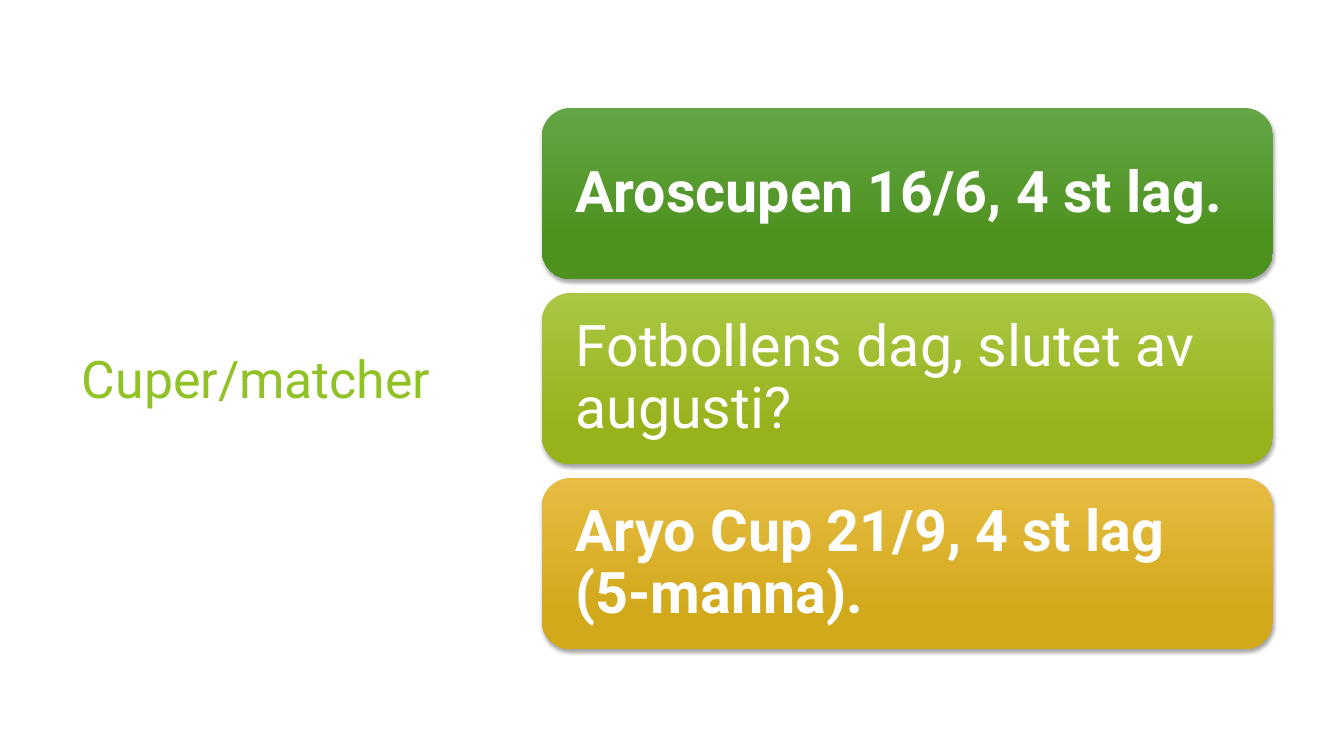
import pptx
import pptx.dml.color
import pptx.enum.shapes
import pptx.enum.text
import pptx.oxml
import pptx.oxml.ns
import pptx.util

TITLE = "Cuper/matcher"
# text, bold, colour name
EVENTS = [
    ("Aroscupen 16/6, 4 st lag.", True, "green"),
    ("Fotbollens dag, slutet av augusti?", False, "lime"),
    ("Aryo Cup 21/9, 4 st lag (5-manna).", True, "gold"),
]
COLORS = {
    "title": "90C226",
    "event_text": "FFFFFF",
    "green_top": "63A545", "green_bottom": "4D921E",
    "lime_top": "AAC744", "lime_bottom": "97B31C",
    "gold_top": "E7BC43", "gold_bottom": "D2A91B",
}
FONT = "Roboto"
SLIDE_W, SLIDE_H = 1344, 756
TITLE_BOX = (72, 152, 391, 452)
CARD_LEFT, CARD_TOP, CARD_W, CARD_H, CARD_GAP = 542, 108, 731, 171, 14
CARD_INSET = 25
EMU_PER_PX = 12192000 / SLIDE_W
SHADOW = (
    f'<a:outerShdw {pptx.oxml.ns.nsdecls("a")} blurRad="38100" dist="25400" '
    'dir="5400000" rotWithShape="0"><a:srgbClr val="000000">'
    '<a:alpha val="35000"/></a:srgbClr></a:outerShdw>'
)


def px(*lengths):
    return [pptx.util.Emu(round(length * EMU_PER_PX)) for length in lengths]


def rgb(name):
    return pptx.dml.color.RGBColor.from_string(COLORS[name])


def write(shape, text, size, color, bold=False):
    """Put one left-aligned, vertically centred paragraph in a shape."""
    frame = shape.text_frame
    frame.word_wrap = True
    frame.vertical_anchor = pptx.enum.text.MSO_ANCHOR.MIDDLE
    paragraph = frame.paragraphs[0]
    paragraph.text = text
    paragraph.alignment = pptx.enum.text.PP_ALIGN.LEFT
    font = paragraph.font
    font.name, font.size, font.bold = FONT, pptx.util.Pt(size), bold
    font.color.rgb = rgb(color)
    return frame, paragraph


def add_event(slide, top, text, bold, color):
    card = slide.shapes.add_shape(
        pptx.enum.shapes.MSO_SHAPE.ROUNDED_RECTANGLE,
        *px(CARD_LEFT, top, CARD_W, CARD_H))
    card.line.fill.background()
    card.fill.gradient()
    card.fill.gradient_angle = 270
    stops = card.fill.gradient_stops
    for stop, position, end in zip(stops, (0, 0.78), ("top", "bottom")):
        stop.position = position
        stop.color.rgb = rgb(f"{color}_{end}")
    card.shadow.inherit = False
    effects = card.element.spPr.find(pptx.oxml.ns.qn("a:effectLst"))
    effects.append(pptx.oxml.parse_xml(SHADOW))

    frame, paragraph = write(card, text, 41, "event_text", bold)
    paragraph.line_spacing = 0.9
    inset, = px(CARD_INSET)
    frame.margin_left = frame.margin_right = inset
    frame.margin_top = frame.margin_bottom = inset


def main():
    deck = pptx.Presentation()
    deck.slide_width, deck.slide_height = px(SLIDE_W, SLIDE_H)
    slide = deck.slides.add_slide(deck.slide_layouts[6])
    write(slide.shapes.add_textbox(*px(*TITLE_BOX)), TITLE, 37, "title")
    for row, event in enumerate(EVENTS):
        add_event(slide, CARD_TOP + row * (CARD_H + CARD_GAP), *event)
    deck.save("out.pptx")


if __name__ == "__main__":
    main()
